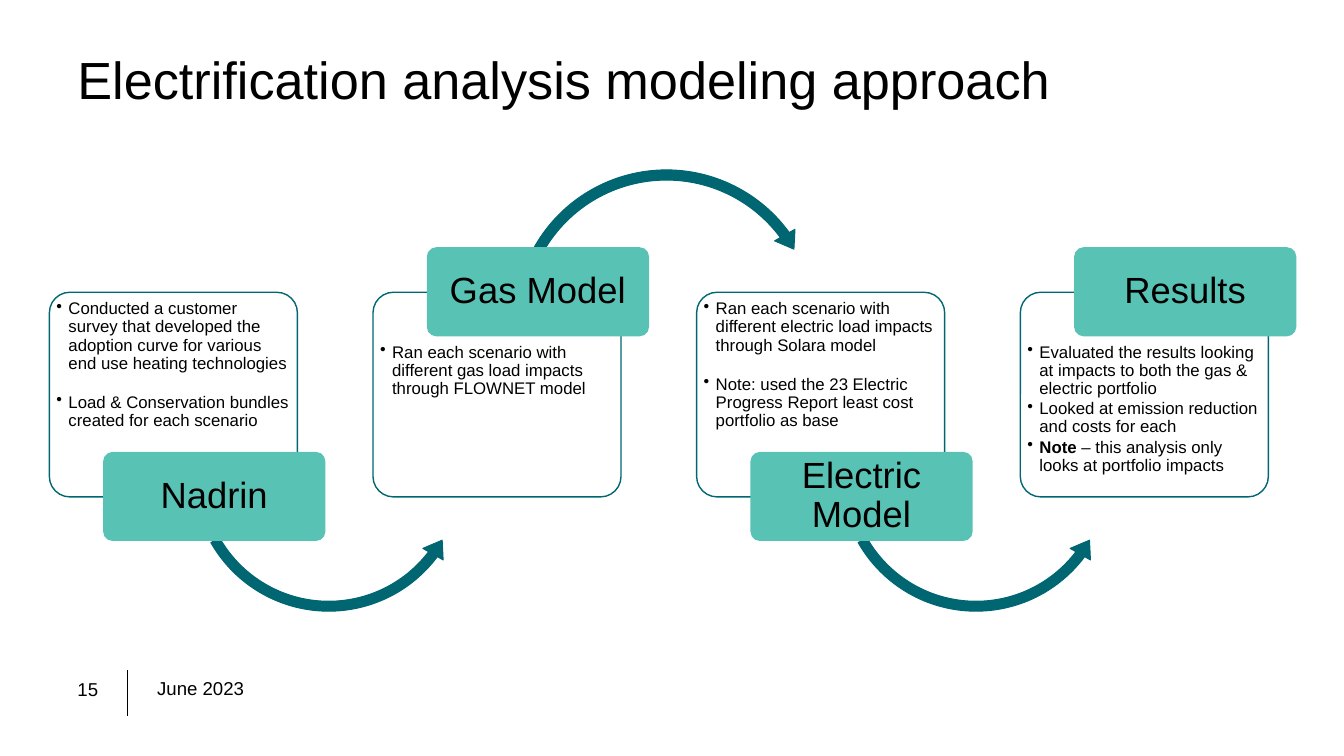
from lxml import etree
from pptx import Presentation, util as u
from pptx.dml.color import RGBColor
from pptx.enum import shapes, text
from pptx.oxml.ns import qn

TEAL, MINT, WHITE, BLACK = "006671", "58C3B4", "FFFFFF", "000000"
KIND = shapes.MSO_SHAPE
MID = text.MSO_ANCHOR.MIDDLE
TOP = text.MSO_ANCHOR.TOP


def paint(fmt, tone):
    fmt.solid()
    fmt.fore_color.rgb = RGBColor.from_string(tone)


def write(shape, paras, size, inset=(0.1, 0.05, 0.1, 0.05), anchor=TOP,
          align=text.PP_ALIGN.LEFT, line=0.9, bullet=False, gap=0):
    frame = shape.text_frame
    frame.word_wrap = True
    frame.vertical_anchor = anchor
    (frame.margin_left, frame.margin_top,
     frame.margin_right, frame.margin_bottom) = map(u.Inches, inset)
    for i, runs in enumerate(paras):
        para = frame.paragraphs[0] if i == 0 else frame.add_paragraph()
        para.alignment = align
        para.line_spacing = line
        if i:
            para.space_before = u.Pt(gap)
        if bullet:
            props = para._p.get_or_add_pPr()
            props.set("marL", str(u.Inches(0.12)))
            props.set("indent", str(u.Inches(-0.12)))
            etree.SubElement(props, qn("a:buChar")).set("char", "•")
        for words, bold in runs:
            run = para.add_run()
            run.text = words
            run.font.name = "Arial"
            run.font.size = u.Pt(size)
            run.font.bold = bold
            paint(run.font.fill, BLACK)


deck = Presentation()
deck.slide_width, deck.slide_height = u.Inches(13.33), u.Inches(7.5)
slide = deck.slides.add_slide(deck.slide_layouts[6])
draw = slide.shapes

rule = draw.add_connector(shapes.MSO_CONNECTOR.STRAIGHT, u.Inches(1.26),
                          u.Inches(6.65), u.Inches(1.26), u.Inches(7.1))
paint(rule.line.fill, BLACK)
rule.line.width = u.Pt(0.75)
etree.SubElement(rule._element.spPr, qn("a:effectLst"))

for words, box, size, anchor, line in [
    ("15", (0.67, 6.68, 0.56, 0.33), 13.3, TOP, 1.0),
    ("June 2023", (1.46, 6.69, 4.61, 0.33), 13.3, TOP, 0.9),
    ("Electrification analysis modeling approach",
     (0.67, 0.4, 12, 0.83), 37.3, MID, 0.9),
]:
    label = draw.add_textbox(*map(u.Inches, box))
    write(label, [[(words, False)]], size, anchor=anchor, line=line)

steps = [
    ("Nadrin", 15, [
        [("Conducted a customer survey that developed the adoption curve "
          "for various end use heating technologies", False)],
        [("Load & Conservation bundles created for each scenario", False)]]),
    ("Gas Model", 0, [
        [("Ran each scenario with different gas load impacts "
          "through FLOWNET model", False)]]),
    ("Electric Model", 15, [
        [("Ran each scenario with different electric load impacts "
          "through Solara model", False)],
        [("Note: used the 23 Electric Progress Report least cost "
          "portfolio as base", False)]]),
    ("Results", 1.5, [
        [("Evaluated the results looking at impacts to both the gas & "
          "electric portfolio", False)],
        [("Looked at emission reduction and costs for each", False)],
        [("Note", True),
         (" – this analysis only looks at portfolio impacts", False)]]),
]
under = (KIND.LEFT_CIRCULAR_ARROW, 1.36, 3.31, 2.82,
         (0.035, 4.408, 22.163, 90.245, 0.041))
over = (KIND.CIRCULAR_ARROW, 1.34, 1.62, 3.14,
        (0.032, 3.933, 194.312, 125.755, 0.037))

for i, (name, gap, notes) in enumerate(steps):
    left = 0.49 + 3.21 * i
    high = i % 2 == 1
    kind, shift, top, side, bend = over if high else under
    parts = [
        (KIND.ROUNDED_RECTANGLE, (left, 2.9, 2.46, 2.03),
         (0.1,), WHITE, TEAL, 1),
        (kind, (left + shift, top, side, side), bend, TEAL, TEAL, 0.75),
        (KIND.ROUNDED_RECTANGLE,
         (left + 0.54, 2.46 if high else 4.49, 2.19, 0.87),
         (0.1,), MINT, MINT, 1),
    ]
    if i == len(steps) - 1:
        del parts[1]
    made = []
    for form, box, bends, fill, edge, width in parts:
        shape = draw.add_shape(form, *map(u.Inches, box))
        shape.shadow.inherit = False
        for n, value in enumerate(bends):
            shape.adjustments[n] = value
        paint(shape.fill, fill)
        paint(shape.line.fill, edge)
        shape.line.width = u.Pt(width)
        made.append(shape)
    card, tag = made[0], made[-1]
    tint = card._element.spPr.find(qn("a:solidFill"))[0]
    etree.SubElement(tint, qn("a:alpha")).set("val", "90000")
    write(card, notes, 12, inset=(0.01, 0.45 if high else 0.02, 0.02, 0),
          bullet=True, gap=gap)
    write(tag, [[(name, False)]], 26, inset=(0.05, 0.04, 0.05, 0.04),
          anchor=MID, align=text.PP_ALIGN.CENTER)

deck.save("out.pptx")
